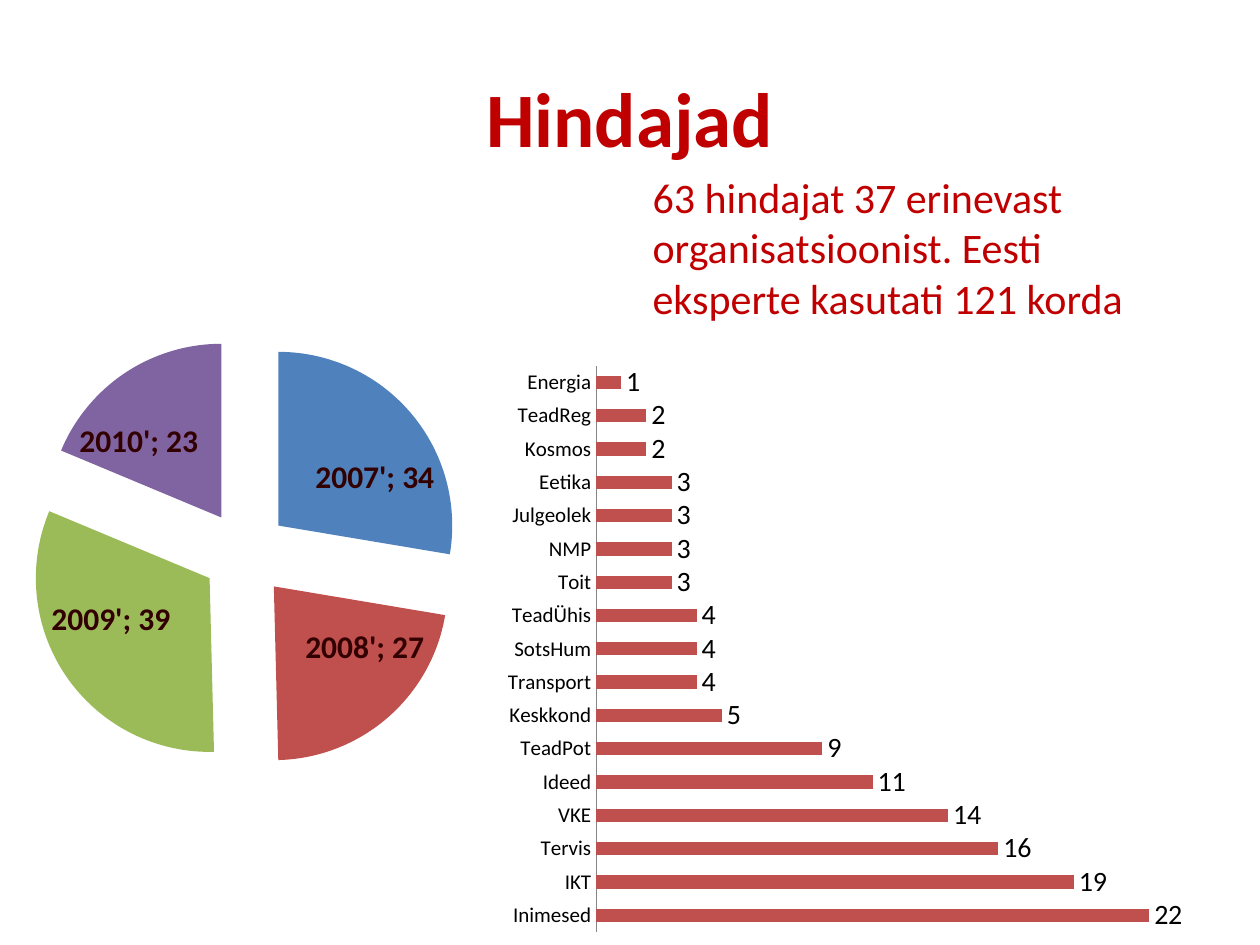
import pptx
import pptx.util
import pptx.chart.data
import pptx.dml.color
import pptx.enum.chart
import pptx.enum.text
import pptx.oxml

Pt = pptx.util.Pt
COLORS = {
    "heading": "C00000",
    "label": "320000",
    "text": "000000",
    "axis": "868686",
    "blue": "4F81BD",
    "red": "C0504D",
    "green": "9BBB59",
    "purple": "8064A2",
}
EVALUATORS_BY_YEAR = {"2007'": 34, "2008'": 27, "2009'": 39, "2010'": 23}
YEAR_COLORS = ["blue", "red", "green", "purple"]
EXPERTS_BY_FIELD = {
    "Inimesed": 22, "IKT": 19, "Tervis": 16, "VKE": 14, "Ideed": 11,
    "TeadPot": 9, "Keskkond": 5, "Transport": 4, "SotsHum": 4,
    "TeadÜhis": 4, "Toit": 3, "NMP": 3, "Julgeolek": 3, "Eetika": 3,
    "Kosmos": 2, "TeadReg": 2, "Energia": 1,
}


class SlideBuilder:
    font_name = "Calibri"

    def __init__(self, slide):
        self.slide = slide

    def color(self, name):
        return pptx.dml.color.RGBColor.from_string(COLORS[name])

    def style(self, font, size, color, bold=False):
        font.name = self.font_name
        font.size = Pt(size)
        font.bold = bold
        font.color.rgb = self.color(color)

    def text(self, box, wording, size, bold=False, centered=False, space_before=0):
        frame = self.slide.shapes.add_textbox(*map(Pt, box)).text_frame
        frame.word_wrap = True
        frame.text = wording
        paragraph = frame.paragraphs[0]
        paragraph.space_before = Pt(space_before)
        if centered:
            frame.vertical_anchor = pptx.enum.text.MSO_ANCHOR.MIDDLE
            paragraph.alignment = pptx.enum.text.PP_ALIGN.CENTER
        self.style(paragraph.runs[0].font, size, "heading", bold)

    def chart(self, kind, box, values, plot_area):
        data = pptx.chart.data.CategoryChartData()
        data.categories = list(values)
        data.add_series("Series 1", list(values.values()))
        chart = self.slide.shapes.add_chart(kind, *map(Pt, box), data).chart
        chart.has_legend = False
        chart.has_title = False
        self.style(chart.font, 10, "text")
        self.place_plot(chart, plot_area)
        return chart

    def place_plot(self, chart, plot_area):
        modes = '<c:layoutTarget val="inner"/><c:xMode val="edge"/><c:yMode val="edge"/>'
        sizes = "".join(f'<c:{key} val="{share}"/>' for key, share in zip("xywh", plot_area))
        layout = pptx.oxml.parse_xml(
            '<c:layout xmlns:c="http://schemas.openxmlformats.org/drawingml/2006/chart">'
            f"<c:manualLayout>{modes}{sizes}</c:manualLayout></c:layout>"
        )
        plot_element = chart.plots[0]._element.getparent()
        for old_layout in plot_element.findall(layout.tag):
            plot_element.remove(old_layout)
        plot_element.insert(0, layout)

    def labels(self, plot, size, color, position, bold=False, category=False):
        plot.has_data_labels = True
        labels = plot.data_labels
        labels.show_value = True
        labels.show_category_name = category
        labels.position = position
        self.style(labels.font, size, color, bold)

    def pie(self, box, values, colors, plot_area, explosion):
        chart = self.chart(pptx.enum.chart.XL_CHART_TYPE.PIE, box, values, plot_area)
        plot = chart.plots[0]
        plot.vary_by_categories = True
        series = plot.series[0]
        for index, name in enumerate(colors):
            fill = series.points[index].format.fill
            fill.solid()
            fill.fore_color.rgb = self.color(name)
        exploded = pptx.oxml.parse_xml(
            '<c:explosion xmlns:c="http://schemas.openxmlformats.org/drawingml/2006/chart" '
            f'val="{explosion}"/>'
        )
        series._element.find(exploded.tag.replace("explosion", "dPt")).addprevious(exploded)
        best_fit = pptx.enum.chart.XL_LABEL_POSITION.BEST_FIT
        self.labels(plot, 18, "label", best_fit, bold=True, category=True)

    def bars(self, box, values, color, plot_area):
        chart = self.chart(pptx.enum.chart.XL_CHART_TYPE.BAR_CLUSTERED, box, values, plot_area)
        plot = chart.plots[0]
        plot.vary_by_categories = False
        plot.gap_width = 150
        plot.overlap = -25
        fill = plot.series[0].format.fill
        fill.solid()
        fill.fore_color.rgb = self.color(color)
        self.labels(plot, 16, "text", pptx.enum.chart.XL_LABEL_POSITION.OUTSIDE_END)
        fields = chart.category_axis
        fields.major_tick_mark = pptx.enum.chart.XL_TICK_MARK.NONE
        fields.format.line.color.rgb = self.color("axis")
        self.style(fields.tick_labels.font, 12, "text")
        counts = chart.value_axis
        counts.minimum_scale = 0
        counts.maximum_scale = 25
        counts.has_major_gridlines = False
        counts.visible = False


def main():
    presentation = pptx.Presentation()
    presentation.slide_width = Pt(720)
    presentation.slide_height = Pt(540)
    builder = SlideBuilder(presentation.slides.add_slide(presentation.slide_layouts[6]))
    builder.text((36, 21.6, 648, 90), "Hindajad", 44, bold=True, centered=True)
    builder.pie((-25.2, 145.4, 318.2, 356.4), EVALUATORS_BY_YEAR, YEAR_COLORS,
                (0.13, 0.13, 0.78, 0.7), 25)
    builder.text((365.8, 94.3, 318.2, 388),
                 "63 hindajat 37 erinevast organisatsioonist. Eesti eksperte kasutati 121 korda",
                 24, space_before=4.8)
    builder.bars((280.8, 202.3, 427.7, 337), EXPERTS_BY_FIELD, "red",
                 (0.14, 0.02, 0.84, 0.96))
    presentation.save("out.pptx")


if __name__ == "__main__":
    main()
